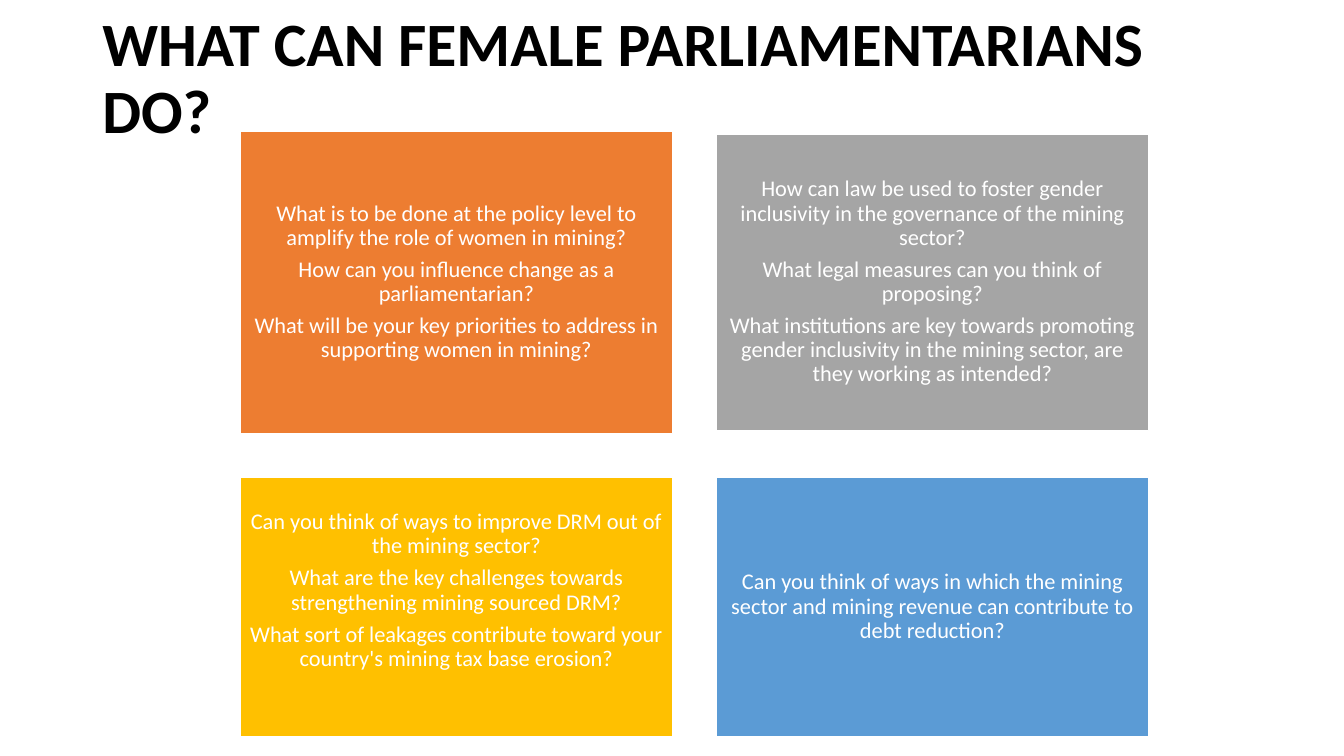
from pptx import Presentation
from pptx.dml.color import RGBColor
from pptx.enum.shapes import MSO_SHAPE
from pptx.enum.text import MSO_ANCHOR, PP_ALIGN
from pptx.util import Pt

RECTANGLE = MSO_SHAPE.RECTANGLE
MIDDLE = MSO_ANCHOR.MIDDLE
CENTER = PP_ALIGN.CENTER

BLACK = RGBColor(0x00, 0x00, 0x00)
WHITE = RGBColor(0xFF, 0xFF, 0xFF)
ORANGE = RGBColor(0xED, 0x7D, 0x31)
GRAY = RGBColor(0xA5, 0xA5, 0xA5)
YELLOW = RGBColor(0xFF, 0xC0, 0x00)
BLUE = RGBColor(0x5B, 0x9B, 0xD5)

FONT = "Calibri"
LINE_SPACING = 0.9

deck = Presentation()
deck.slide_width, deck.slide_height = Pt(960), Pt(540)
page = deck.slides.add_slide(deck.slide_layouts[6])

# Question boxes: two columns, each row centred on one height
LEFT, COLUMN_STEP, BOX_WIDTH = 171.5, 340, 309
ROW_CENTERS = [201.6, 433.5]
INSET = 5

# Fill, height, bottom inset, questions
question_boxes = [
    (ORANGE, 216, INSET, [
        "What is to be done at the policy level to amplify the role of women in mining?",
        "How can you influence change as a parliamentarian?",
        "What will be your key priorities to address in supporting women in mining?",
    ]),
    (GRAY, 211.7, INSET, [
        "How can law be used to foster gender inclusivity in the governance of the mining sector?",
        "What legal measures can you think of proposing?",
        "What institutions are key towards promoting gender inclusivity in the mining sector, "
        "are they working as intended?",
    ]),
    (YELLOW, 185.8, 28, [
        "Can you think of ways to improve DRM out of the mining sector?",
        "What are the key challenges towards strengthening mining sourced DRM?",
        "What sort of leakages contribute toward your country's mining tax base erosion?",
    ]),
    (BLUE, 185.8, INSET, [
        "Can you think of ways in which the mining sector and mining revenue "
        "can contribute to debt reduction?",
    ]),
]

for index, (fill, height, bottom_inset, questions) in enumerate(question_boxes):
    row, column = divmod(index, 2)
    box = page.shapes.add_shape(
        RECTANGLE, Pt(LEFT + column * COLUMN_STEP), Pt(ROW_CENTERS[row] - height / 2),
        Pt(BOX_WIDTH), Pt(height))
    box.shadow.inherit = False
    box.fill.solid()
    box.fill.fore_color.rgb = fill
    box.line.color.rgb = WHITE
    box.line.width = Pt(1)

    frame = box.text_frame
    frame.word_wrap = True
    frame.vertical_anchor = MIDDLE
    frame.margin_left = frame.margin_right = frame.margin_top = Pt(INSET)
    frame.margin_bottom = Pt(bottom_inset)
    frame.text = "\n".join(questions)
    for para in frame.paragraphs:
        para.alignment = CENTER
        para.line_spacing = LINE_SPACING
        para.space_after = Pt(5.6)
        para.font.name = FONT
        para.font.size = Pt(16)
        para.font.color.rgb = WHITE

# Title, raised by a deep bottom inset
title = page.shapes.add_textbox(Pt(66), Pt(28.8), Pt(828), Pt(104.4))
frame = title.text_frame
frame.word_wrap = True
frame.vertical_anchor = MIDDLE
frame.margin_bottom = Pt(51)
frame.text = "WHAT CAN FEMALE PARLIAMENTARIANS DO?"
para = frame.paragraphs[0]
para.line_spacing = LINE_SPACING
para.font.name = FONT
para.font.size = Pt(44)
para.font.bold = True
para.font.color.rgb = BLACK

deck.save("out.pptx")
